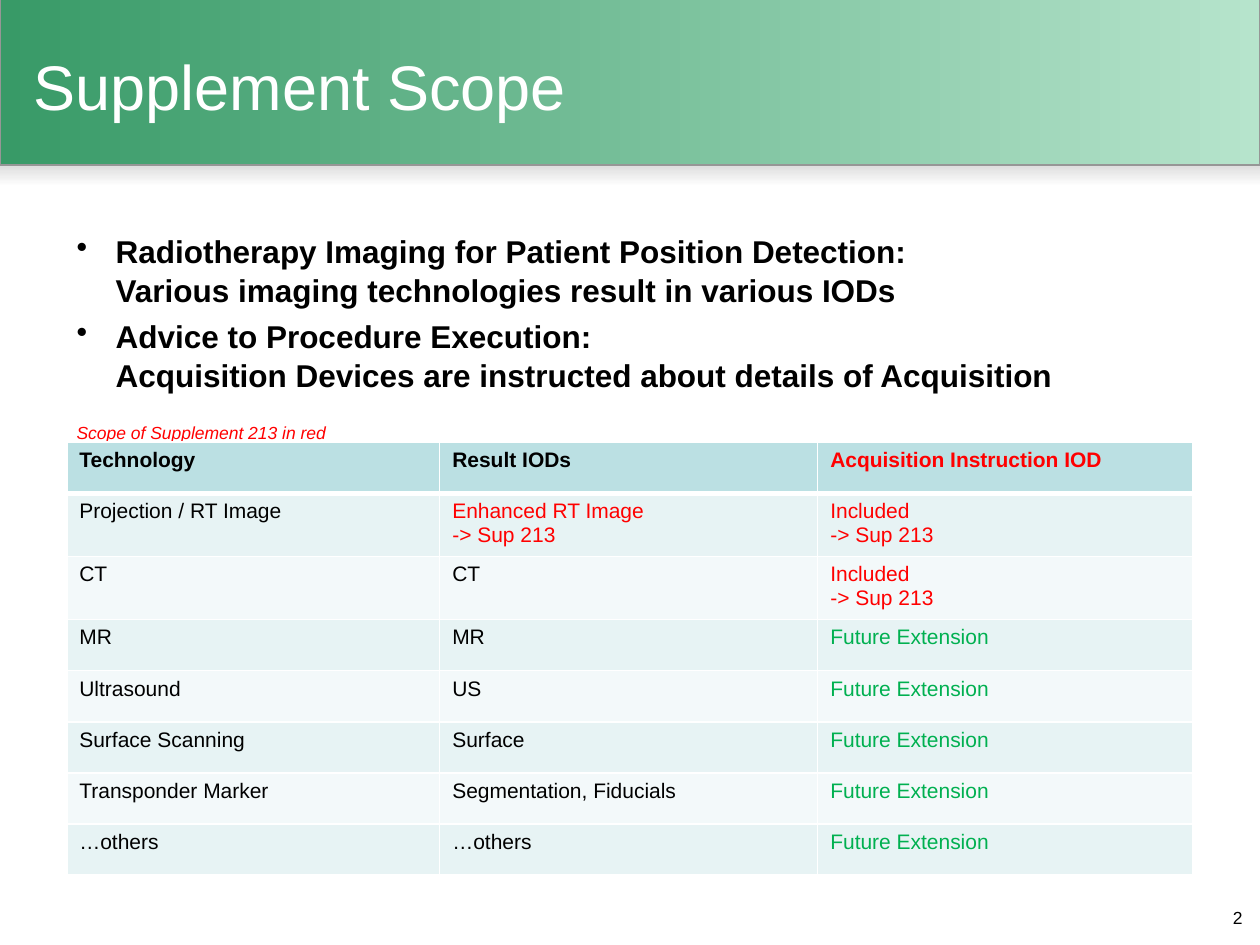
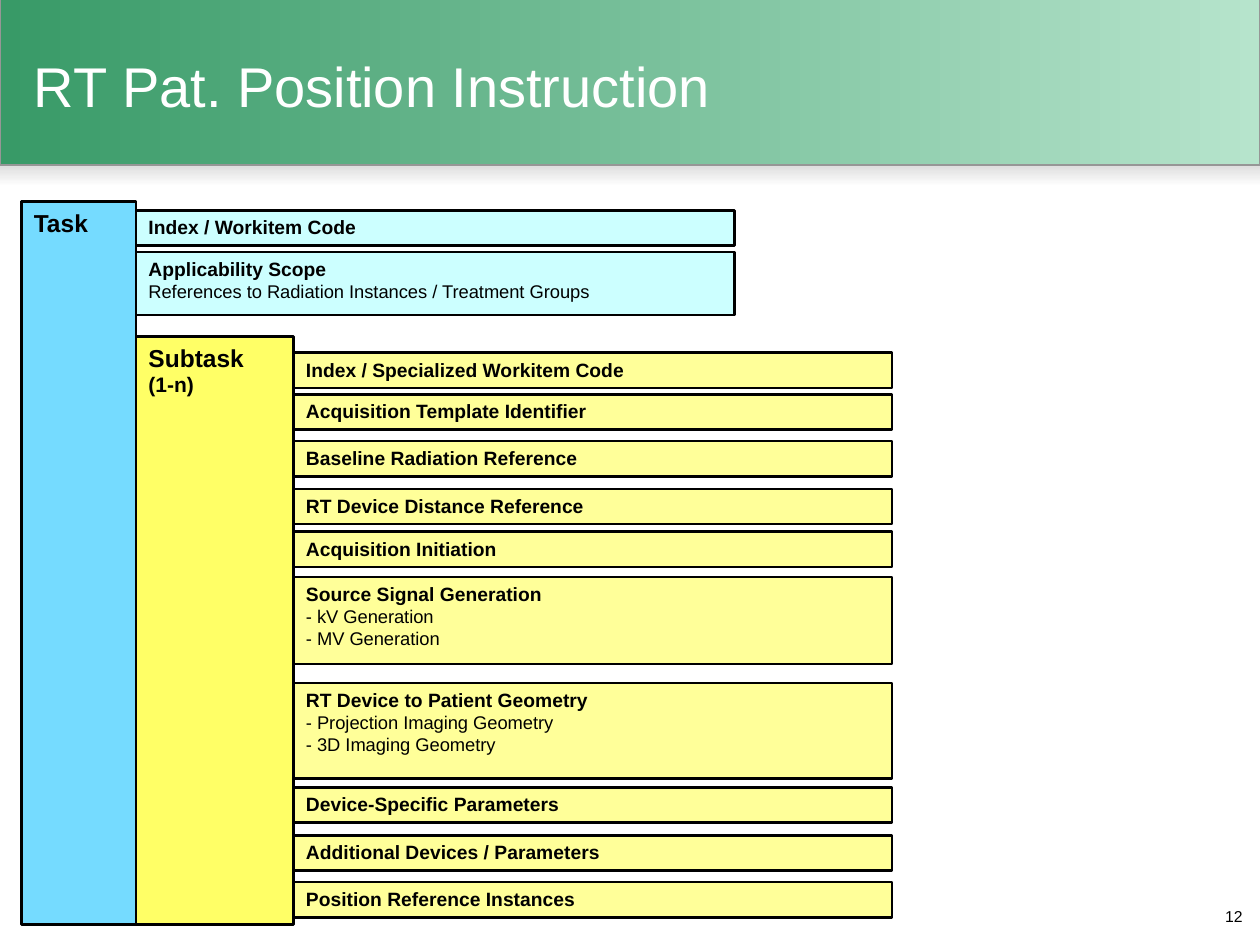
from lxml import etree
from pptx import Presentation
from pptx.dml.color import RGBColor as Rgb
from pptx.enum.shapes import MSO_SHAPE as Kind
from pptx.enum.text import MSO_ANCHOR as Anchor, PP_ALIGN as Align
from pptx.oxml.ns import qn
from pptx.util import Inches, Pt

FONT = "Arial"
BLACK = Rgb(0, 0, 0)
WHITE = Rgb(255, 255, 255)
RED = Rgb(255, 0, 0)
GREEN = Rgb(0x00, 0xB0, 0x50)
GREY = Rgb(0x96, 0x96, 0x96)
SHADE = Rgb(0xDD, 0xDD, 0xDD)
LEAF = Rgb(0x38, 0x9A, 0x67)
MINT = Rgb(0xB6, 0xE4, 0xCC)
TEAL = Rgb(0xBB, 0xE0, 0xE3)
BANDS = [Rgb(0xF3, 0xF9, 0xFA), Rgb(0xE7, 0xF3, 0xF4)]
BLUE = Rgb(0x75, 0xDB, 0xFF)
ICE = Rgb(0xCC, 0xFF, 0xFF)
YELLOW = Rgb(0xFF, 0xFF, 0x66)
CREAM = Rgb(0xFF, 0xFF, 0x99)

POINTS = [
    "Radiotherapy Imaging for Patient Position Detection:\n"
    "Various imaging technologies result in various IODs",
    "Advice to Procedure Execution:\n"
    "Acquisition Devices are instructed about details of Acquisition",
]
LATER = ("Future Extension", GREEN)
DONE = (["Included", "-> Sup 213"], RED)
SCOPE = [
    ["Technology", "Result IODs", ("Acquisition Instruction IOD", RED)],
    ["Projection / RT Image", (["Enhanced RT Image", "-> Sup 213"], RED), DONE],
    ["CT", "CT", DONE],
    ["MR", "MR", LATER],
    ["Ultrasound", "US", LATER],
    ["Surface Scanning", "Surface", LATER],
    ["Transponder Marker", "Segmentation, Fiducials", LATER],
    ["…others", "…others", LATER],
]
TASK = [
    (0.07, 0.28, ["Index / Workitem Code"]),
    (0.4, 0.5, ["Applicability Scope",
                "References to Radiation Instances / Treatment Groups"]),
]
STEPS = [
    (0.13, 0.28, ["Index / Specialized Workitem Code"]),
    (0.46, 0.28, ["Acquisition Template Identifier"]),
    (0.83, 0.28, ["Baseline Radiation Reference"]),
    (1.21, 0.28, ["RT Device Distance Reference"]),
    (1.55, 0.28, ["Acquisition Initiation"]),
    (1.91, 0.69, ["Source Signal Generation", "- kV Generation", "- MV Generation"]),
    (2.75, 0.76, ["RT Device to Patient Geometry", "- Projection Imaging Geometry",
                  "- 3D Imaging Geometry"]),
    (3.58, 0.28, ["Device-Specific Parameters"]),
    (3.96, 0.28, ["Additional Devices / Parameters"]),
    (4.33, 0.28, ["Position Reference Instances"]),
]


def style(para, size, color=BLACK, bold=False, italic=False):
    for run in para.runs:
        font = run.font
        font.name, font.size = FONT, Pt(size)
        font.bold, font.italic = bold, italic
        font.color.rgb = color


def add_text(slide, box):
    frame = slide.shapes.add_textbox(*map(Inches, box)).text_frame
    frame.word_wrap = True
    return frame


def add_rect(slide, box):
    rect = slide.shapes.add_shape(Kind.RECTANGLE, *map(Inches, box))
    rect.shadow.inherit = False
    return rect


def add_band(slide, box, colors, angle):
    band = add_rect(slide, box)
    band.fill.gradient()
    band.fill.gradient_angle = angle
    for stop, color in zip(band.fill.gradient_stops, colors):
        stop.color.rgb = color
    return band


def add_page(deck, title, size, number, small):
    slide = deck.slides.add_slide(deck.slide_layouts[6])
    add_band(slide, (0, 1.31, 10, 0.17), (SHADE, WHITE), 270).line.fill.background()
    band = add_band(slide, (0, -0.02, 10, 1.33), (LEAF, MINT), 0)
    band.line.color.rgb = GREY
    band.line.width = Pt(0.75)
    head = add_text(slide, (0.17, 0.14, 6.75, 1.07))
    head.vertical_anchor = Anchor.MIDDLE
    head.text = title
    style(head.paragraphs[0], size, WHITE)
    foot = add_text(slide, (9.37, 7.15, 0.59, 0.34))
    foot.text = str(number)
    foot.paragraphs[0].alignment = Align.RIGHT
    style(foot.paragraphs[0], small)
    return slide


def add_points(slide, box):
    frame = add_text(slide, box)
    for i, point in enumerate(POINTS):
        para = frame.add_paragraph() if i else frame.paragraphs[0]
        para.text = point
        props = para._p.get_or_add_pPr()
        props.set("marL", str(Inches(0.31)))
        props.set("indent", str(-Inches(0.31)))
        etree.SubElement(props, qn("a:buChar")).set("char", "•")
        para.line_spacing = 1.04
        if i:
            para.space_before = Pt(3.6)
        style(para, 18, bold=True)
    note = frame.add_paragraph()
    note.text = "Scope of Supplement 213 in red"
    note.space_before = Pt(16)
    style(note, 10, RED, italic=True)


def add_edges(cell, top, bottom):
    props = cell._tc.get_or_add_tcPr()
    for side, width in zip("LRTB", (1, 1, top, bottom)):
        line = etree.SubElement(props, qn("a:ln" + side), w=str(Pt(width)))
        fill = etree.SubElement(line, qn("a:solidFill"))
        etree.SubElement(fill, qn("a:srgbClr"), val=str(WHITE))


def add_scope(slide, box):
    table = slide.shapes.add_table(len(SCOPE), 3, *map(Inches, box)).table
    for col, width in zip(table.columns, (2.96, 3, 2.98)):
        col.width = Inches(width)
    for r, row in enumerate(SCOPE):
        table.rows[r].height = Inches(box[3] / len(SCOPE))
        for c, entry in enumerate(row):
            text, color = entry if isinstance(entry, tuple) else (entry, BLACK)
            cell = table.cell(r, c)
            add_edges(cell, 3 if r == 1 else 1, 1 if r else 3)
            cell.fill.solid()
            cell.fill.fore_color.rgb = BANDS[r % 2] if r else TEAL
            cell.text = text if isinstance(text, str) else "\n".join(text)
            for para in cell.text_frame.paragraphs:
                style(para, 12, color, bold=r == 0)


def add_block(slide, box, color, lines, sizes, bolds, top=0.05):
    rect = add_rect(slide, box)
    rect.fill.solid()
    rect.fill.fore_color.rgb = color
    rect.line.color.rgb = BLACK
    rect.line.width = Pt(1.5)
    frame = rect.text_frame
    frame.word_wrap = True
    frame.vertical_anchor = Anchor.TOP
    frame.margin_top = Inches(top)
    frame.text = "\n".join(lines)
    for i, para in enumerate(frame.paragraphs):
        para.alignment = Align.LEFT
        style(para, sizes[min(i, 1)], bold=bolds[min(i, 1)])


def add_group(slide, box, colors, lines, items):
    left, top, width, _ = box
    add_block(slide, box, colors[0], lines, (14, 12), (True, True))
    for down, high, texts in items:
        place = (left + width, top + down, 4.75, high)
        add_block(slide, place, colors[1], texts, (11, 10.5), (True, False), 0.04)


def main():
    deck = Presentation()
    deck.slide_width, deck.slide_height = Inches(10), Inches(7.5)
    slide = add_page(deck, "Supplement Scope", 36, 2, 10)
    add_points(slide, (0.51, 1.78, 9, 1.8))
    add_scope(slide, (0.53, 3.51, 8.94, 3.25))
    slide = add_page(deck, "RT Pat. Position Instruction", 32, 12, 9)
    add_group(slide, (0.17, 1.6, 0.91, 5.74), (BLUE, ICE), ["Task"], TASK)
    add_group(slide, (1.08, 2.67, 1.25, 4.67), (YELLOW, CREAM),
              ["Subtask", "(1-n)"], STEPS)
    deck.save("out.pptx")


if __name__ == "__main__":
    main()
